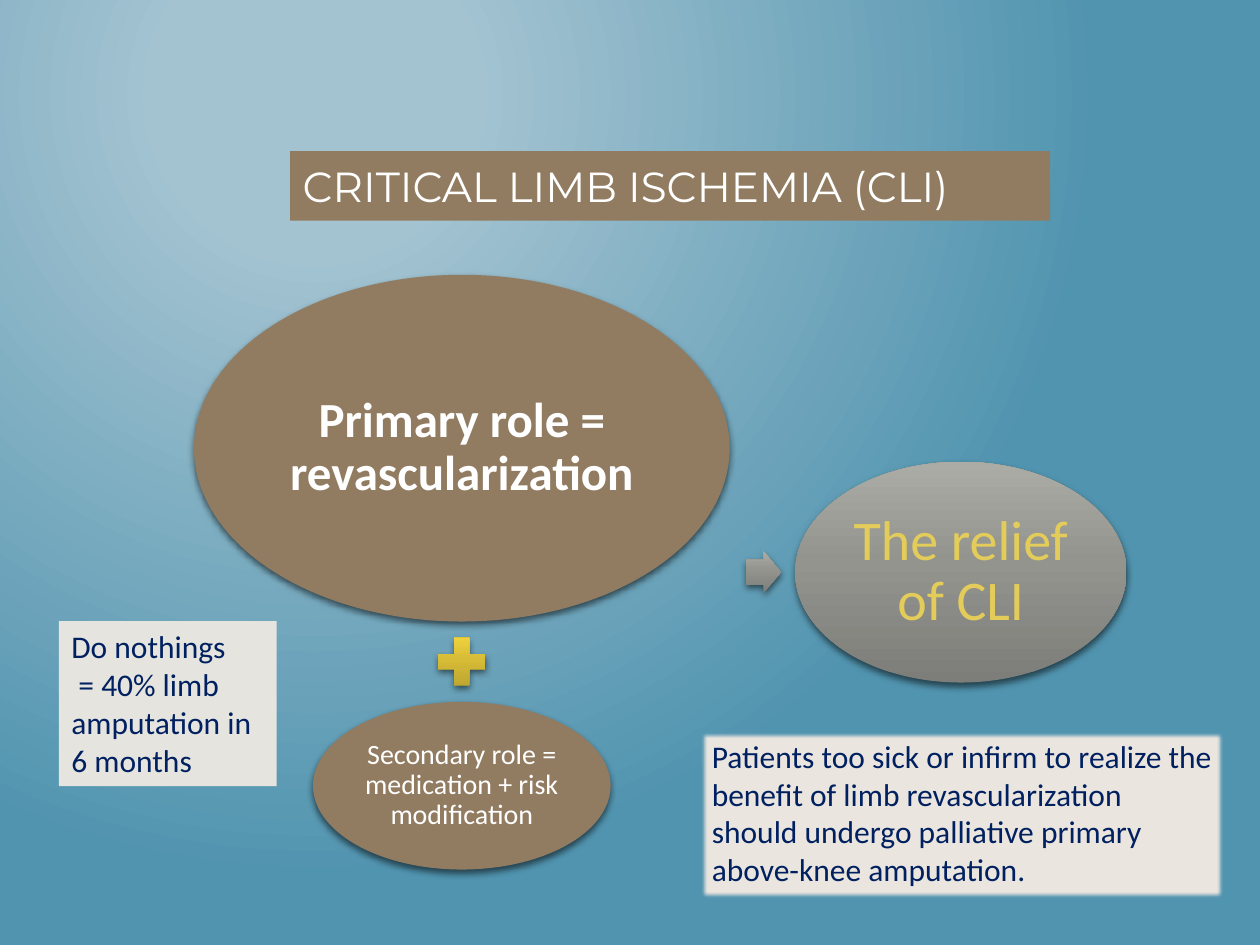
import pptx
import pptx.util
import pptx.oxml
import pptx.oxml.ns
import pptx.dml.color
import pptx.enum.shapes
import pptx.enum.text

Cm = pptx.util.Cm
KIND = pptx.enum.shapes.MSO_SHAPE
ALIGN = pptx.enum.text.PP_ALIGN
ANCHOR = pptx.enum.text.MSO_ANCHOR
NS = pptx.oxml.ns.nsdecls("a")
HUES = {
    "brown": "927C61", "white": "FFFFFF", "navy": "002060", "gold": "E3CC5A",
    "cream": "EAE5DF", "pale": "E5E4DF", "black": "000000",
}
FADES = {
    "sky": [(20, "A3C3D1"), (100, "5194AF")],
    "gray": [(0, "7D7E79"), (55, "93948E"), (100, "ABACA6")],
    "yellow": [(0, "B7A02F"), (55, "D7BC37"), (100, "FADB40")],
}
UPWARD = '<a:lin ang="16200000" scaled="0"/>'
RADIAL = '<a:path path="circle"><a:fillToRect l="50000" t="20000" r="100000" b="100000"/></a:path>'
SHADE = (
    '<a:outerShdw {ns} blurRad="50800" dist="25400" dir="5400000" rotWithShape="0">'
    '<a:srgbClr val="{hue}"><a:alpha val="55000"/></a:srgbClr></a:outerShdw>'
).format(ns=NS, hue=HUES["black"])
SOFT = f'<a:softEdge {NS} rad="31750"/>'


def color(name):
    """Return the named colour."""
    return pptx.dml.color.RGBColor.from_string(HUES[name])


def blend(owner, name, course):
    """Fill a shape or a background with a named gradient."""
    owner.fill.background()
    root = owner.element if hasattr(owner, "element") else owner._cSld
    blank = root.xpath(".//a:noFill")[0]
    stops = "".join(
        f'<a:gs pos="{pos * 1000}"><a:srgbClr val="{hue}"/></a:gs>'
        for pos, hue in FADES[name]
    )
    fade = f'<a:gradFill {NS} rotWithShape="1"><a:gsLst>{stops}</a:gsLst>{course}</a:gradFill>'
    blank.getparent().replace(blank, pptx.oxml.parse_xml(fade))


def draw(slide, kind, box, fill, effect=None):
    """Add a preset shape with its fill and effect."""
    shape = slide.shapes.add_shape(kind, *map(Cm, box))
    if fill in FADES:
        blend(shape, fill, UPWARD)
    else:
        shape.fill.solid()
        shape.fill.fore_color.rgb = color(fill)
    shape.line.fill.background()
    shape.shadow.inherit = False
    if effect:
        shape.element.xpath(".//a:effectLst")[0].append(pptx.oxml.parse_xml(effect))
    return shape


def write(shape, text, size, hue, font="Calibri", bold=False,
          align=ALIGN.LEFT, anchor=ANCHOR.TOP, inset=None, space=None):
    """Set the text of a shape, one paragraph a line."""
    frame = shape.text_frame
    frame.word_wrap = True
    frame.vertical_anchor = anchor
    if inset is not None:
        frame.margin_left = frame.margin_right = Cm(inset)
        frame.margin_top = frame.margin_bottom = Cm(inset)
    frame.text = text
    for para in frame.paragraphs:
        para.alignment = align
        para.line_spacing = space
        para.font.size = pptx.util.Pt(size)
        para.font.name = font
        para.font.bold = bold
        para.font.color.rgb = color(hue)


def title(slide, box):
    """Place the title bar."""
    bar = draw(slide, KIND.RECTANGLE, box, "brown")
    write(bar, "CRITICAL LIMB ISCHEMIA (CLI)", 24, "white",
          font="Montserrat", anchor=ANCHOR.MIDDLE)


def bubble(slide, box, fill, text, size, hue, inset=0.1, bold=False):
    """Place an ellipse with centred text."""
    oval = draw(slide, KIND.OVAL, box, fill, SHADE)
    write(oval, text, size, hue, bold=bold, align=ALIGN.CENTER,
          anchor=ANCHOR.MIDDLE, inset=inset, space=0.9)


def roles(slide, box):
    """Place the two roles, joined by a plus, and the goal they lead to."""
    left, top, width, height = box
    main, side, goal = (10.8, 6.99), (6, 3.38), (6.68, 4.45)
    plus, arrow = 1.3, (0.71, 0.84)
    axis, mid = left + main[0] / 2, top + height / 2
    low = top + height - side[1]
    gap = (height - main[1] - side[1] - plus) / 2
    bubble(slide, (left, top, *main), "brown",
           "Primary role = revascularization", 28, "white", bold=True)
    draw(slide, KIND.MATH_PLUS, (axis - plus / 2, low - gap - plus, plus, plus),
         "yellow", SHADE)
    bubble(slide, (axis - side[0] / 2, low, *side), "brown",
           "Secondary role = medication + risk modification", 16, "white", inset=0.05)
    point = draw(slide, KIND.RIGHT_ARROW,
                 (left + 11.13, mid - arrow[1] / 2, *arrow), "gray", SHADE)
    point.adjustments[0] = 0.6
    bubble(slide, (left + width - goal[0], mid - goal[1] / 2, *goal), "gray",
           "The relief of CLI", 32, "gold")


def note(slide, box, fill, text, effect=None):
    """Place a note box."""
    write(draw(slide, KIND.RECTANGLE, box, fill, effect), text, 18, "navy")


def main():
    """Build and save the slide."""
    deck = pptx.Presentation()
    deck.slide_width, deck.slide_height = Cm(25.4), Cm(19.05)
    slide = deck.slides.add_slide(deck.slide_layouts[6])
    blend(slide.background, "sky", RADIAL)
    title(slide, (5.85, 3.05, 15.32, 1.4))
    roles(slide, (3.91, 5.54, 18.8, 11.99))
    note(slide, (14.1, 14.73, 10.59, 3.4), "cream",
         "Patients too sick or infirm to realize the benefit of limb "
         "revascularization should undergo palliative primary above-knee amputation.",
         SOFT)
    note(slide, (1.19, 12.52, 4.39, 3.33), "pale",
         "Do nothings\n = 40% limb amputation in 6 months")
    deck.save("out.pptx")


if __name__ == "__main__":
    main()
